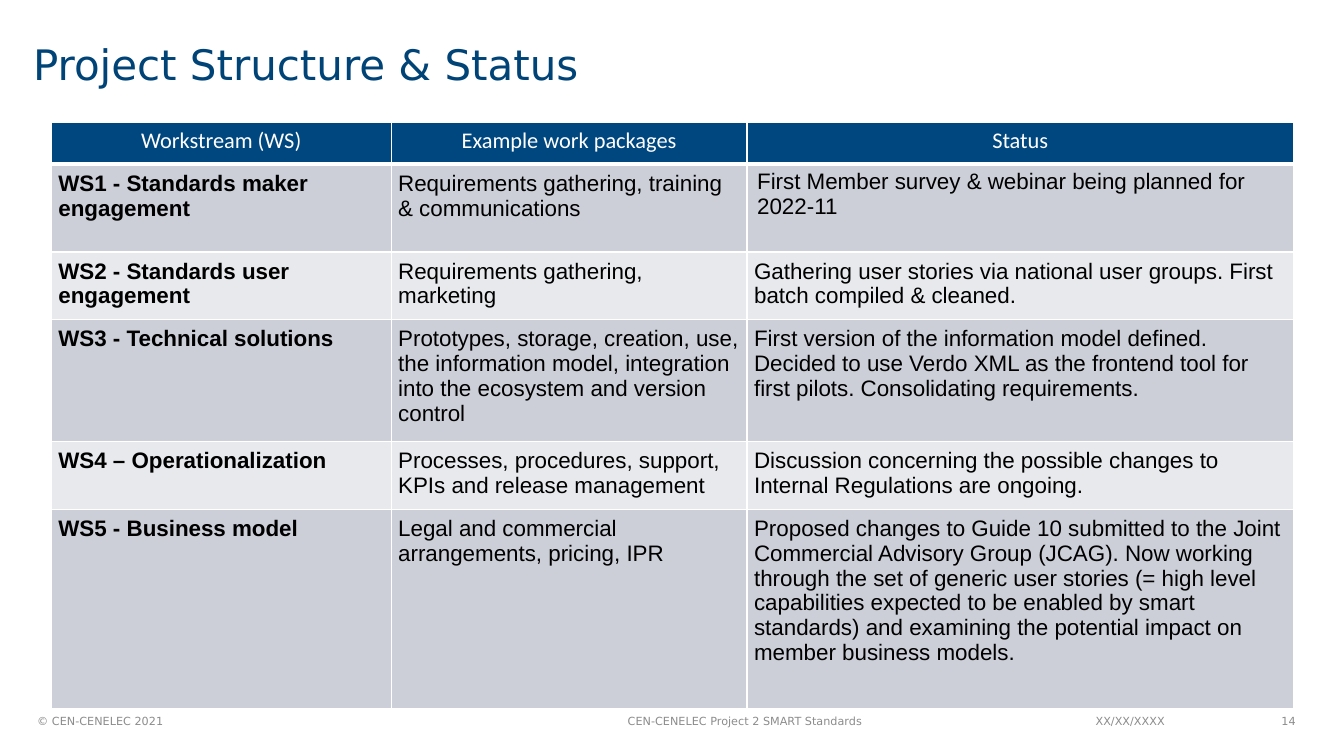
from lxml import etree
from pptx import Presentation
from pptx.dml.color import RGBColor
from pptx.enum.text import MSO_ANCHOR, PP_ALIGN
from pptx.oxml.ns import qn
from pptx.util import Inches, Pt

LEFT, CENTER, RIGHT = PP_ALIGN.LEFT, PP_ALIGN.CENTER, PP_ALIGN.RIGHT
MIDDLE = MSO_ANCHOR.MIDDLE

TITLE_BLUE = RGBColor(0x00, 0x43, 0x77)
HEADER_BLUE = RGBColor(0x00, 0x47, 0x7F)
FOOTER_GREY = RGBColor(0x8C, 0x8C, 0x8C)
DARK_BAND = RGBColor(0xCC, 0xCF, 0xD8)
LIGHT_BAND = RGBColor(0xE7, 0xE9, 0xEC)
WHITE = RGBColor(0xFF, 0xFF, 0xFF)
BLACK = RGBColor(0x00, 0x00, 0x00)

COLUMN_WIDTHS = [3.37, 3.53, 5.42]
ROW_HEIGHTS = [0.42, 0.87, 0.63, 1.05, 0.63, 1.98]
HEADERS = ["Workstream (WS)", "Example work packages", "Status"]
WORKSTREAMS = [
    ("WS1 - Standards maker engagement",
     "Requirements gathering, training & communications",
     "First Member survey & webinar being planned for 2022-11"),
    ("WS2 - Standards user engagement",
     "Requirements gathering, marketing",
     "Gathering user stories via national user groups. First batch compiled & cleaned."),
    ("WS3 - Technical solutions",
     "Prototypes, storage, creation, use, the information model, integration into "
     "the ecosystem and version control",
     "First version of the information model defined. Decided to use Verdo XML as the "
     "frontend tool for first pilots. Consolidating requirements."),
    ("WS4 – Operationalization",
     "Processes, procedures, support, KPIs and release management",
     "Discussion concerning the possible changes to Internal Regulations are ongoing."),
    ("WS5 - Business model",
     "Legal and commercial arrangements, pricing, IPR",
     "Proposed changes to Guide 10 submitted to the Joint Commercial Advisory Group "
     "(JCAG). Now working through the set of generic user stories (= high level "
     "capabilities expected to be enabled by smart standards) and examining the "
     "potential impact on member business models."),
]
FOOTERS = [
    ("© CEN-CENELEC 2021", 0.27, 1.71, LEFT),
    ("CEN-CENELEC Project 2 SMART Standards", 4.42, 5.94, CENTER),
    ("XX/XX/XXXX", 10.47, 1.48, CENTER),
    ("14", 12.06, 0.89, RIGHT),
]


def write_text(text_frame, text, *, size, font, color, bold=False, align=LEFT, spacing=None):
    paragraph = text_frame.paragraphs[0]
    paragraph.alignment = align
    if spacing:
        paragraph.line_spacing = spacing
    run = paragraph.add_run()
    run.text = text
    run.font.size = Pt(size)
    run.font.name = font
    run.font.bold = bold
    run.font.color.rgb = color


def add_label(slide, text, left, top, width, height, **text_format):
    shape = slide.shapes.add_textbox(Inches(left), Inches(top), Inches(width), Inches(height))
    shape.text_frame.word_wrap = True
    shape.text_frame.vertical_anchor = MIDDLE
    write_text(shape.text_frame, text, font="DejaVu Sans", **text_format)


def set_borders(cell, bottom_width):
    properties = cell._tc.get_or_add_tcPr()
    widths = {"a:lnL": 1, "a:lnR": 1, "a:lnT": 1, "a:lnB": bottom_width}
    for position, (tag, width) in enumerate(widths.items()):
        line = etree.Element(qn(tag), w=str(Pt(width)))
        fill = etree.SubElement(line, qn("a:solidFill"))
        etree.SubElement(fill, qn("a:srgbClr"), val=str(WHITE))
        properties.insert(position, line)


def fill_cell(cell, text, fill, *, inset=None, bottom_width=1, **text_format):
    cell.fill.solid()
    cell.fill.fore_color.rgb = fill
    if inset is not None:
        cell.margin_left = cell.margin_right = Inches(inset)
        cell.margin_top = cell.margin_bottom = Inches(inset)
    set_borders(cell, bottom_width)
    write_text(cell.text_frame, text, size=16, **text_format)


def add_status_table(slide):
    frame = slide.shapes.add_table(
        len(ROW_HEIGHTS), len(COLUMN_WIDTHS), Inches(0.51), Inches(1.21),
        Inches(sum(COLUMN_WIDTHS)), Inches(sum(ROW_HEIGHTS)))
    table = frame.table
    for column, width in zip(table.columns, COLUMN_WIDTHS):
        column.width = Inches(width)
    for row, height in zip(table.rows, ROW_HEIGHTS):
        row.height = Inches(height)
    for column_index, header in enumerate(HEADERS):
        fill_cell(table.cell(0, column_index), header, HEADER_BLUE, bottom_width=3,
                  font="Calibri", color=WHITE, align=CENTER)
    for row_index, workstream in enumerate(WORKSTREAMS, start=1):
        band = DARK_BAND if row_index % 2 else LIGHT_BAND
        for column_index, text in enumerate(workstream):
            inset = None if (row_index, column_index) == (1, 2) else 0.07
            fill_cell(table.cell(row_index, column_index), text, band, inset=inset,
                      font="Arial", color=BLACK, bold=column_index == 0)


def main():
    presentation = Presentation()
    presentation.slide_width = Inches(13.33)
    presentation.slide_height = Inches(7.5)
    slide = presentation.slides.add_slide(presentation.slide_layouts[6])
    add_label(slide, "Project Structure & Status", 0.23, 0.24, 9.99, 0.84,
              size=30, color=TITLE_BLUE, spacing=0.9)
    add_status_table(slide)
    for text, left, width, align in FOOTERS:
        add_label(slide, text, left, 6.95, width, 0.4, size=8, color=FOOTER_GREY, align=align)
    presentation.save("out.pptx")


if __name__ == "__main__":
    main()
